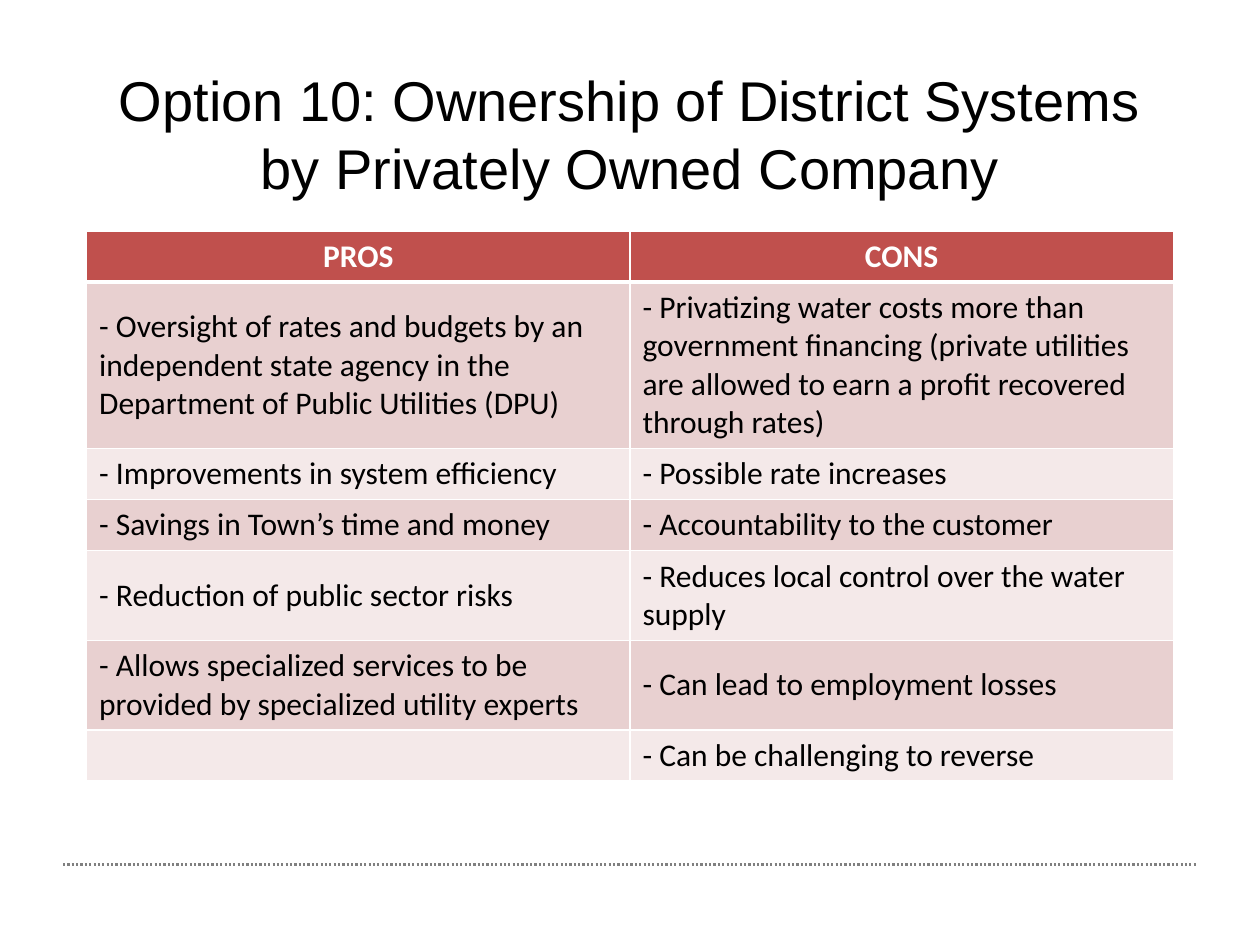
from dataclasses import dataclass

from pptx import Presentation
from pptx.dml.color import RGBColor
from pptx.enum.dml import MSO_LINE
from pptx.enum.shapes import MSO_CONNECTOR
from pptx.enum.text import MSO_ANCHOR, PP_ALIGN
from pptx.oxml.ns import qn
from pptx.util import Pt
from lxml import etree

LEFT, CENTER = PP_ALIGN.LEFT, PP_ALIGN.CENTER
MIDDLE = MSO_ANCHOR.MIDDLE
DOTTED = MSO_LINE.ROUND_DOT
STRAIGHT = MSO_CONNECTOR.STRAIGHT

BLACK, WHITE, GRAY = "000000", "FFFFFF", "808080"
RED, ROSE, PALE = "C0504D", "E8D0D0", "F4E9E9"
EDGE, WIDTH = 49.5, 621
ROW = 29.2


@dataclass
class Style:
    fill: str
    ink: str
    bold: bool
    align: PP_ALIGN
    top: float = 1
    base: float = 1


ROWS = [
    ("PROS", "CONS"),
    (
        "- Oversight of rates and budgets by an independent state agency "
        "in the Department of Public Utilities (DPU)",
        "- Privatizing water costs more than government financing (private "
        "utilities are allowed to earn a profit recovered through rates)",
    ),
    ("- Improvements in system efficiency", "- Possible rate increases"),
    ("- Savings in Town’s time and money", "- Accountability to the customer"),
    (
        "- Reduction of public sector risks",
        "- Reduces local control over the water supply",
    ),
    (
        "- Allows specialized services to be provided by specialized utility experts",
        "- Can lead to employment losses",
    ),
    ("", "- Can be challenging to reverse"),
]


def color(code: str) -> RGBColor:
    return RGBColor.from_string(code)


def set_font(para, name: str, size: float, ink: str, bold: bool = False) -> None:
    font = para.font
    font.name, font.size, font.bold = name, Pt(size), bold
    font.color.rgb = color(ink)


def add_title(slide, text: str) -> None:
    title = slide.shapes.title
    title.left, title.top = Pt(EDGE), Pt(24)
    title.width, title.height = Pt(WIDTH), Pt(104)
    frame = title.text_frame
    frame.text = text
    frame.word_wrap = True
    frame.vertical_anchor = MIDDLE
    para = frame.paragraphs[0]
    para.alignment = CENTER
    set_font(para, "Arial", 32, BLACK)


def add_rule(slide) -> None:
    y = Pt(494)
    rule = slide.shapes.add_connector(STRAIGHT, Pt(36), y, Pt(684), y)
    rule.line.color.rgb = color(GRAY)
    rule.line.width = Pt(1.25)
    rule.line.dash_style = DOTTED
    etree.SubElement(rule._element.spPr, qn("a:effectLst"))


def add_border(cell, side: str, width: float) -> None:
    props = cell._tc.get_or_add_tcPr()
    line = etree.SubElement(props, qn(f"a:ln{side}"), w=str(Pt(width)))
    fill = etree.SubElement(line, qn("a:solidFill"))
    etree.SubElement(fill, qn("a:srgbClr"), val=WHITE)


def fill_cell(cell, text: str, style: Style) -> None:
    for side, width in zip("LRTB", (1, 1, style.top, style.base)):
        add_border(cell, side, width)
    cell.fill.solid()
    cell.fill.fore_color.rgb = color(style.fill)
    cell.vertical_anchor = MIDDLE
    cell.text = text
    para = cell.text_frame.paragraphs[0]
    para.alignment = style.align
    set_font(para, "Calibri", 18, style.ink, style.bold)


def pick_style(row: int) -> Style:
    if row == 0:
        return Style(RED, WHITE, True, CENTER, base=3)
    fill = ROSE if row % 2 else PALE
    return Style(fill, BLACK, False, LEFT, top=3 if row == 1 else 1)


def add_grid(slide) -> None:
    count = len(ROWS)
    table = slide.shapes.add_table(
        count, 2, Pt(EDGE), Pt(132), Pt(WIDTH), Pt(ROW * count)
    ).table
    for col in table.columns:
        col.width = Pt(WIDTH / 2)
    for r, texts in enumerate(ROWS):
        table.rows[r].height = Pt(ROW)
        for c, text in enumerate(texts):
            fill_cell(table.cell(r, c), text, pick_style(r))


def main() -> None:
    deck = Presentation()
    deck.slide_width, deck.slide_height = Pt(720), Pt(540)
    slide = deck.slides.add_slide(deck.slide_layouts[5])
    add_rule(slide)
    add_title(
        slide, "Option 10: Ownership of District Systems by Privately Owned Company"
    )
    add_grid(slide)
    deck.save("out.pptx")


if __name__ == "__main__":
    main()
